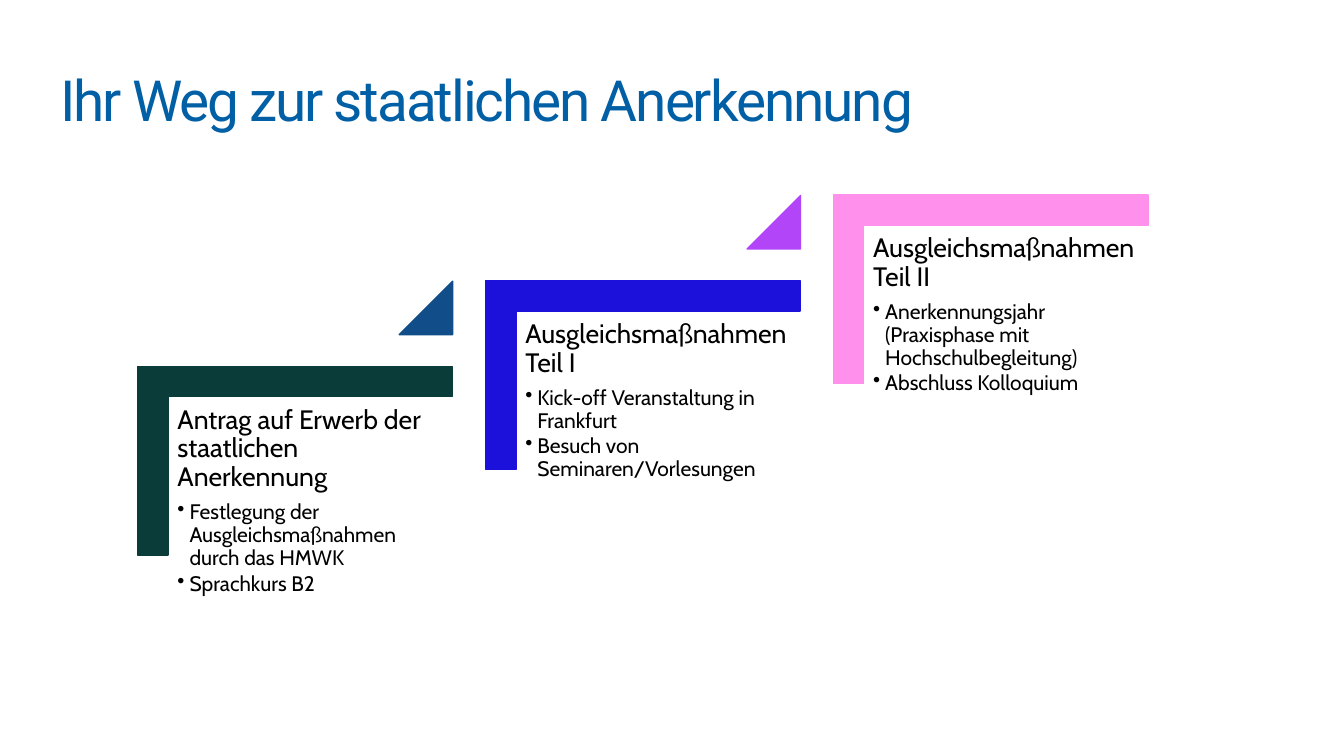
from dataclasses import dataclass

from lxml import etree
from pptx import Presentation
from pptx.dml.color import RGBColor
from pptx.enum.shapes import MSO_SHAPE
from pptx.enum.text import MSO_ANCHOR
from pptx.oxml.ns import qn
from pptx.util import Pt

CORNER = MSO_SHAPE.CORNER
TRIANGLE = MSO_SHAPE.ISOSCELES_TRIANGLE
TOP = MSO_ANCHOR.TOP
PX = 9144  # 100 px to the inch


@dataclass(frozen=True)
class Theme:
    title_font: str = "Roboto"
    body_font: str = "Cabin"
    title_size: float = 40.5
    heading_size: float = 19
    bullet_size: float = 15
    title_color: str = "015FA6"
    text_color: str = "000000"
    corner_colors: tuple = ("0A3D3A", "1C11DB", "FF91EC")
    triangle_colors: tuple = ("104D89", "B345F8")


class SlideBuilder:
    def __init__(self, slide, theme):
        self.slide = slide
        self.theme = theme

    def text_box(self, shapes, box, inset=0):
        shape = shapes.add_textbox(*(value * PX for value in box))
        text_frame = shape.text_frame
        text_frame.word_wrap = True
        text_frame.vertical_anchor = TOP
        text_frame.margin_left = text_frame.margin_right = inset * PX
        text_frame.margin_top = text_frame.margin_bottom = inset * PX
        return text_frame

    def format_runs(self, paragraph, font_name, size, color):
        for run in paragraph.runs:
            run.font.name = font_name
            run.font.size = Pt(size)
            run.font.color.rgb = RGBColor.from_string(color)

    def title(self, text, box):
        text_frame = self.text_box(self.slide.shapes, box)
        text_frame.text = text
        paragraph = text_frame.paragraphs[0]
        paragraph.line_spacing = Pt(45)
        theme = self.theme
        self.format_runs(paragraph, theme.title_font, theme.title_size, theme.title_color)
        paragraph.runs[0]._r.get_or_add_rPr().set("spc", "-150")

    def block(self, shapes, kind, box, color, adjustments, rotation=0):
        shape = shapes.add_shape(kind, *(value * PX for value in box))
        shape.shadow.inherit = False
        shape.rotation = rotation
        for index, value in enumerate(adjustments):
            shape.adjustments[index] = value
        shape.fill.solid()
        shape.fill.fore_color.rgb = RGBColor.from_string(color)
        shape.line.color.rgb = RGBColor.from_string(color)
        shape.line.width = Pt(1)

    def add_bullet(self, paragraph, indent):
        paragraph.level = 1
        properties = paragraph._p.get_or_add_pPr()
        properties.set("marL", str(indent * PX))
        properties.set("indent", str(-indent * PX))
        etree.SubElement(properties, qn("a:buChar")).set("char", "•")

    def step_text(self, shapes, box, heading, bullets):
        theme = self.theme
        text_frame = self.text_box(shapes, box, inset=8)
        text_frame.text = "\n".join([heading, *bullets])
        for index, paragraph in enumerate(text_frame.paragraphs):
            size, gap = theme.heading_size, 0.35
            if index:
                size, gap = theme.bullet_size, 0.15
                self.add_bullet(paragraph, indent=12)
            paragraph.line_spacing = 0.9
            paragraph.space_after = Pt(size * gap)
            self.format_runs(paragraph, theme.body_font, size, theme.text_color)

    def staircase(self, steps):
        """Draw the steps rising to the right, a triangle leading to each next one."""
        theme = self.theme
        shapes = self.slide.shapes.add_group_shape().shapes
        for index, (heading, bullets) in enumerate(steps):
            right, down = index * 345, index * -85
            self.block(shapes, CORNER, (199 + right, 301 + down, 187, 312),
                       theme.corner_colors[index], (0.161, 0.161), rotation=90)
            self.step_text(shapes, (168 + right, 395 + down, 281, 247), heading, bullets)
            if index < len(steps) - 1:
                self.block(shapes, TRIANGLE, (396 + right, 279 + down, 53, 53),
                           theme.triangle_colors[index], (1,))


STEPS = [
    ("Antrag auf Erwerb der staatlichen Anerkennung",
     ["Festlegung der Ausgleichsmaßnahmen durch das HMWK", "Sprachkurs B2"]),
    ("Ausgleichsmaßnahmen Teil I",
     ["Kick-off Veranstaltung in Frankfurt", "Besuch von Seminaren/Vorlesungen"]),
    ("Ausgleichsmaßnahmen Teil II",
     ["Anerkennungsjahr (Praxisphase mit Hochschulbegleitung)", "Abschluss Kolloquium"]),
]


def main():
    presentation = Presentation()
    presentation.slide_width = 1333 * PX
    presentation.slide_height = 750 * PX
    slide = presentation.slides.add_slide(presentation.slide_layouts[6])
    builder = SlideBuilder(slide, Theme())
    builder.title("Ihr Weg zur staatlichen Anerkennung", (60, 69, 1019, 53))
    builder.staircase(STEPS)
    presentation.save("out.pptx")


if __name__ == "__main__":
    main()
